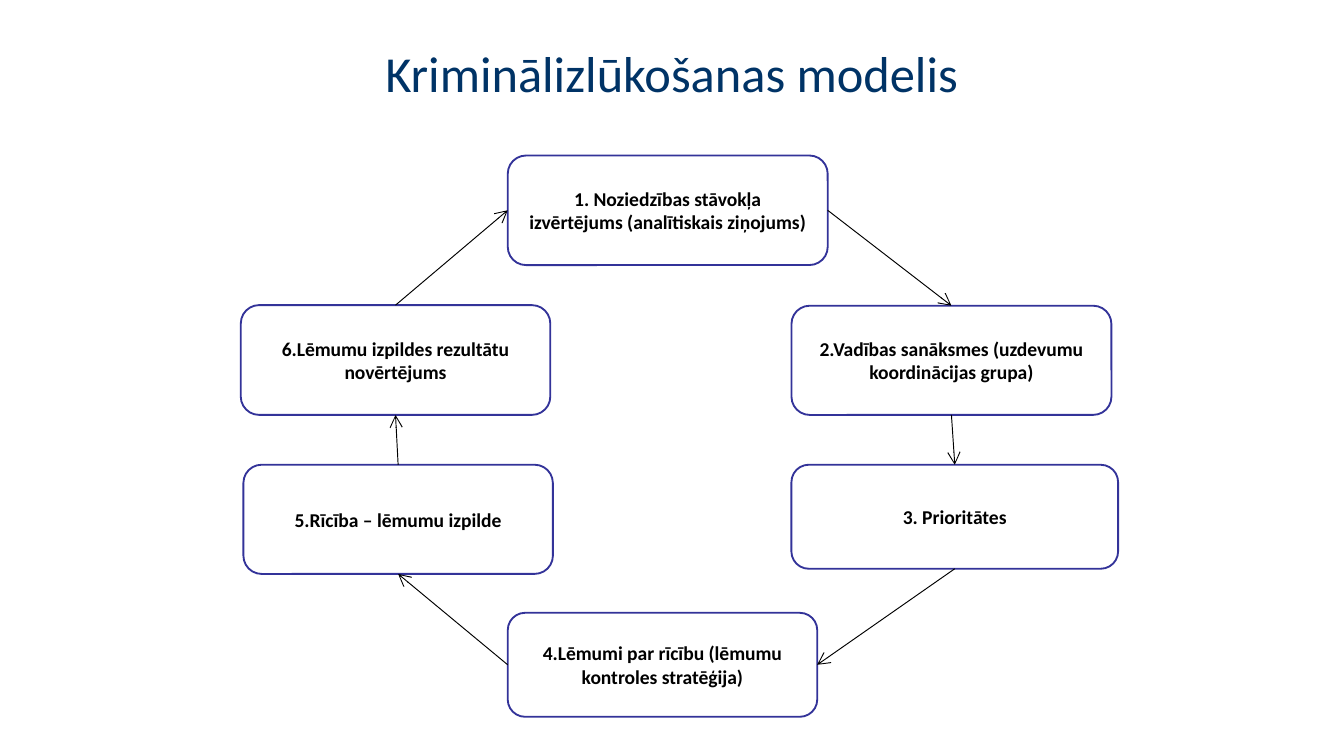
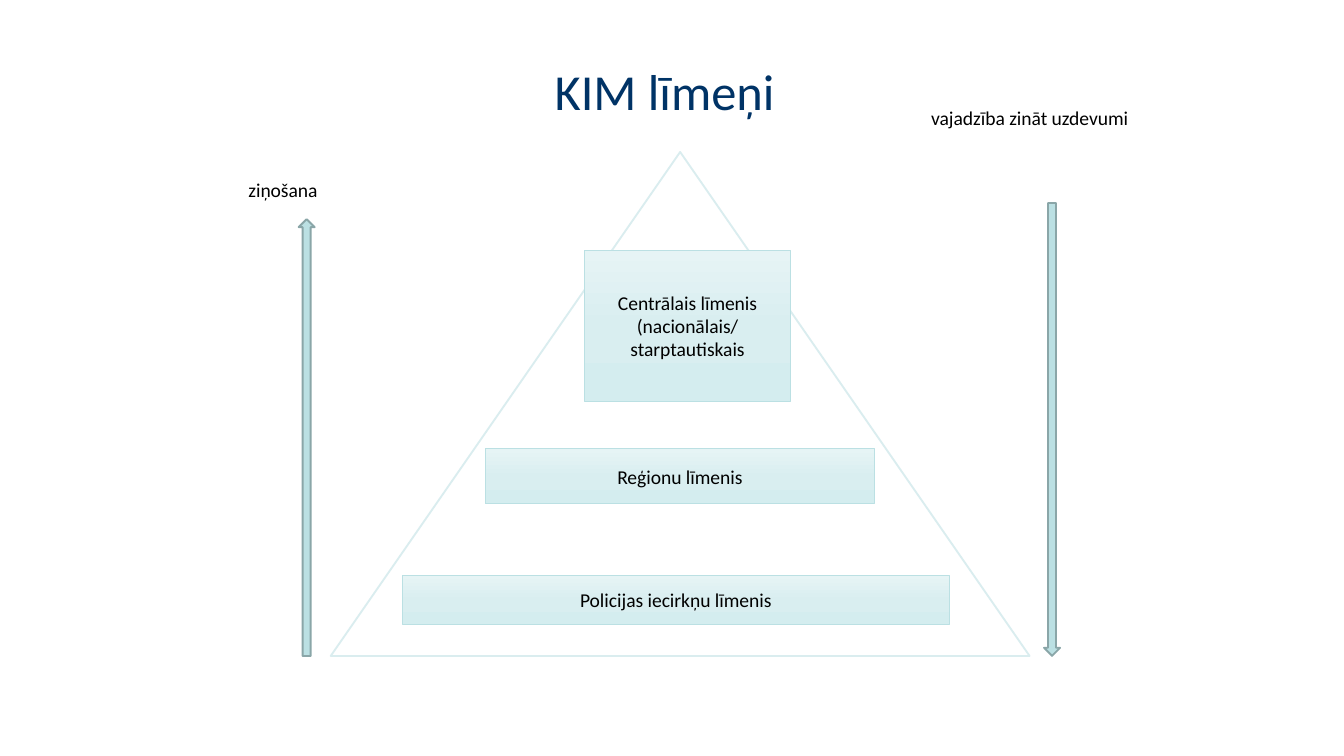
from copy import deepcopy

from pptx import Presentation
from pptx.dml.color import RGBColor
from pptx.enum.shapes import MSO_CONNECTOR, MSO_SHAPE
from pptx.enum.text import MSO_ANCHOR, MSO_AUTO_SIZE, PP_ALIGN
from pptx.oxml.ns import qn
from pptx.oxml.xmlchemy import OxmlElement
from pptx.util import Pt

HUES = {
    "title": "003366", "text": "000000", "white": "FFFFFF",
    "node": "333399", "edge": "DAEDEF", "teal": "BBE0E3", "dark": "8AA6A8",
    "top": "E6F4F5", "mid": "D9EEF0", "low": "D4EDEF",
}
FADE = [(0, "top"), (0.5, "mid"), (1, "low")]

HEAD = {"name": "Calibri", "size": Pt(27)}
BODY = {"name": "Calibri", "size": Pt(10.5)}
BOLD = {**BODY, "bold": True}
FRAME = {"word_wrap": True, "vertical_anchor": MSO_ANCHOR.MIDDLE}
GROW = {"word_wrap": True, "auto_size": MSO_AUTO_SIZE.SHAPE_TO_FIT_TEXT}
TIGHT = {**FRAME, "margin_left": Pt(5.4), "margin_right": Pt(5.4),
         "margin_top": Pt(2.7), "margin_bottom": Pt(2.7)}

# Connection sites of a box
TOP, LEFT, BASE, RIGHT = range(4)


def hue(name):
    return RGBColor.from_string(HUES[name])


def apply(part, form):
    for key, val in form.items():
        setattr(part, key, val)


def place(box, spot):
    """Turn a spot inside a box into slide lengths."""
    x, y, w, h = spot
    return Pt(box[0] + x), Pt(box[1] + y), Pt(w), Pt(h)


def write(shape, text, font=BODY, frame=FRAME, align=PP_ALIGN.CENTER, tint="text"):
    body = shape.text_frame
    body.text = text
    apply(body, frame)
    for para in body.paragraphs:
        para.alignment = align
        apply(para.font, font)
        para.font.color.rgb = hue(tint)


def draw(slide, kind, box, spot, line, width=1, fill="white"):
    shape = slide.shapes.add_shape(kind, *place(box, spot))
    shape.shadow.inherit = False
    shape.fill.solid()
    shape.fill.fore_color.rgb = hue(fill)
    shape.line.color.rgb = hue(line)
    shape.line.width = Pt(width)
    return shape


def shade(shape):
    """Fill a shape with the vertical three-stop fade."""
    fill = shape.fill
    fill.gradient()
    fill.gradient_angle = 270
    stops = shape._element.spPr.find(qn("a:gradFill")).find(qn("a:gsLst"))
    stops.append(deepcopy(stops[-1]))
    for stop, (pos, name) in zip(fill.gradient_stops, FADE):
        stop.position = pos
        stop.color.rgb = hue(name)


def link(slide, start, site, end, goal):
    line = slide.shapes.add_connector(MSO_CONNECTOR.STRAIGHT, 0, 0, 0, 0)
    line.begin_connect(start, site)
    line.end_connect(end, goal)
    line.line.color.rgb = hue("text")
    line.line.width = Pt(0.5)
    tail = OxmlElement("a:tailEnd")
    tail.set("type", "arrow")
    line.line._get_or_add_ln().append(tail)
    line._element.spPr.append(OxmlElement("a:effectLst"))


def title(slide, box, text):
    shape = slide.shapes.add_textbox(*place(box, (0, 0, *box[2:])))
    write(shape, text, HEAD, TIGHT, tint="title")


def cycle(slide, box):
    # Steps, clockwise from the top
    steps = [
        ("1. Noziedzības stāvokļa izvērtējums (analītiskais ziņojums)",
         (143, 0, 171.4, 58.7)),
        ("2.Vadības sanāksmes (uzdevumu koordinācijas grupa)",
         (295, 80.5, 171.4, 58.5)),
        ("3. Prioritātes", (295, 165.7, 175, 55.7)),
        ("4.Lēmumi par rīcību (lēmumu kontroles stratēģija)",
         (143, 245, 165.8, 55.7)),
        ("5.Rīcība – lēmumu izpilde", (1.4, 165.7, 165.8, 58.5)),
        ("6.Lēmumu izpildes rezultātu novērtējums", (0, 80.2, 165.8, 58.8)),
    ]
    nodes = []
    for text, spot in steps:
        node = draw(slide, MSO_SHAPE.ROUNDED_RECTANGLE, box, spot, "node")
        write(node, text, BOLD)
        nodes.append(node)

    # Arrows from each step to the next
    sites = [(RIGHT, TOP), (BASE, TOP), (BASE, RIGHT),
             (LEFT, BASE), (TOP, BASE), (TOP, LEFT)]
    for start, end, (site, goal) in zip(nodes, nodes[1:] + nodes[:1], sites):
        link(slide, start, site, end, goal)


def levels(slide, box):
    # Pyramid
    draw(slide, MSO_SHAPE.ISOSCELES_TRIANGLE, box, (51.2, 28.4, 374.4, 270), "edge")

    # Level bands
    bands = [
        ("Centrālais līmenis (nacionālais/\nstarptautiskais", (187, 81, 110.7, 81)),
        ("Reģionu līmenis", (134, 187.5, 208.5, 29.5)),
        ("Policijas iecirkņu līmenis", (89.4, 255.5, 293.4, 26)),
    ]
    for text, spot in bands:
        band = draw(slide, MSO_SHAPE.RECTANGLE, box, spot, "teal", 0.5)
        shade(band)
        write(band, text)

    # Side arrows with their labels
    sides = [
        (MSO_SHAPE.UP_ARROW, (34, 64.4, 8.6, 234),
         "ziņošana", (0, 39, 76.3, 20)),
        (MSO_SHAPE.DOWN_ARROW, (433.3, 55.8, 8.6, 242.6),
         "vajadzība zināt uzdevumi", (365.7, 0.4, 121.7, 20)),
    ]
    for kind, spot, text, area in sides:
        draw(slide, kind, box, spot, "dark", fill="teal")
        label = slide.shapes.add_textbox(*place(box, area))
        write(label, text, frame=GROW, align=PP_ALIGN.LEFT)


def main():
    deck = Presentation()
    deck.slide_width, deck.slide_height = Pt(720), Pt(405)
    pages = [
        ("Kriminālizlūkošanas modelis", (116.8, 19.5, 486, 38),
         cycle, (129, 83.3, 470, 301)),
        ("KIM līmeņi", (113, 14.4, 486, 67.6),
         levels, (126, 53, 487, 299)),
    ]
    for text, top, build, area in pages:
        slide = deck.slides.add_slide(deck.slide_layouts[6])
        title(slide, top, text)
        build(slide, area)
    deck.save("out.pptx")


if __name__ == "__main__":
    main()
